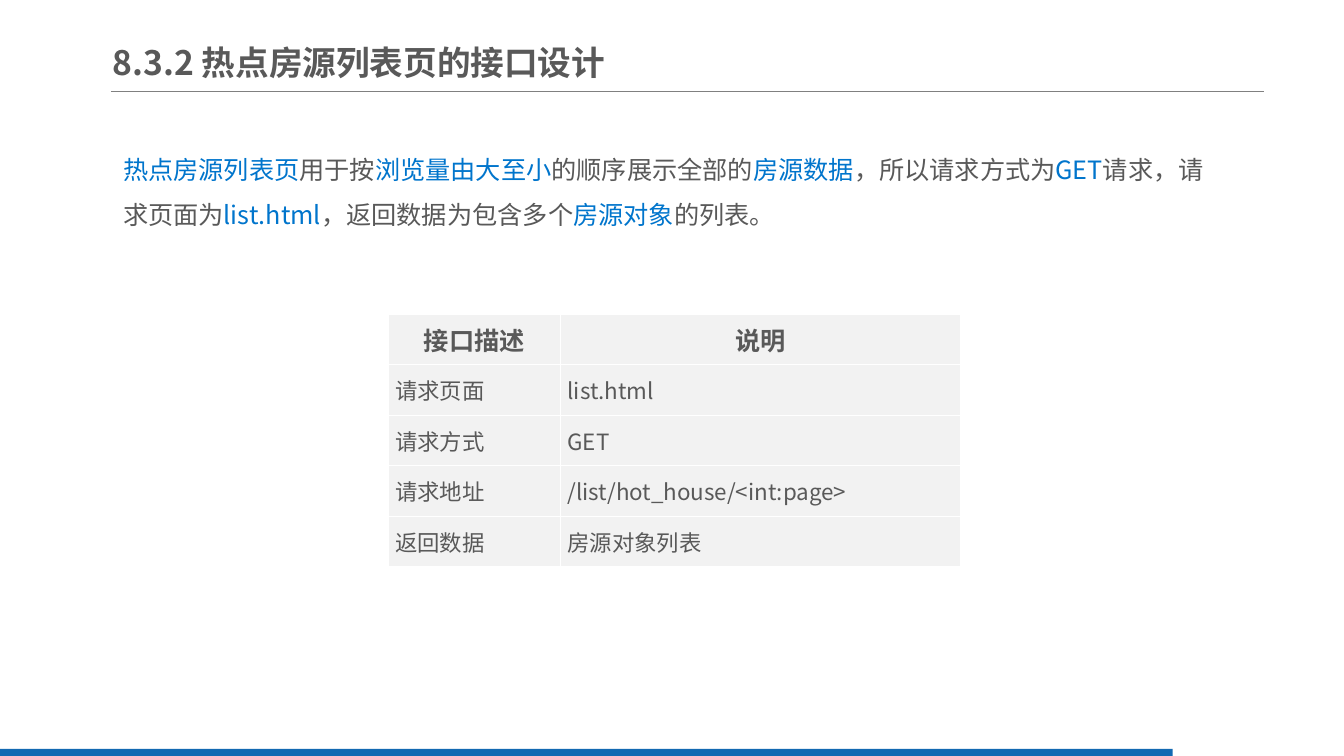
from lxml import etree
from pptx import Presentation
from pptx import util as u
from pptx.dml.color import RGBColor
from pptx.enum import shapes, text
from pptx.oxml import ns

FONT = "Noto Sans CJK SC"
GREY_TEXT = RGBColor(0x59, 0x59, 0x59)
BLUE_TEXT = RGBColor(0x00, 0x75, 0xCC)
RULE_GREY = RGBColor(0x80, 0x80, 0x80)
BAR_BLUE = RGBColor(0x13, 0x69, 0xB2)
CELL_GREY = RGBColor(0xF2, 0xF2, 0xF2)
WHITE = RGBColor(0xFF, 0xFF, 0xFF)

INTRODUCTION = [
    ("热点房源列表页", BLUE_TEXT),
    ("用于按", GREY_TEXT),
    ("浏览量由大至小", BLUE_TEXT),
    ("的顺序展示全部的", GREY_TEXT),
    ("房源数据", BLUE_TEXT),
    ("，所以请求方式为", GREY_TEXT),
    ("GET", BLUE_TEXT),
    ("请求，请求页面为", GREY_TEXT),
    ("list.html", BLUE_TEXT),
    ("，返回数据为包含多个", GREY_TEXT),
    ("房源对象", BLUE_TEXT),
    ("的列表。", GREY_TEXT),
]
INTERFACE_ROWS = [
    ("接口描述", "说明"),
    ("请求页面", "list.html"),
    ("请求方式", "GET"),
    ("请求地址", "/list/hot_house/<int:page>"),
    ("返回数据", "房源对象列表"),
]


class SlideBuilder:
    def __init__(self, slide):
        self.slide = slide

    def style_run(self, run, size, color=GREY_TEXT, bold=False):
        run.font.size = u.Pt(size)
        run.font.bold = bold
        run.font.color.rgb = color
        run.font.name = FONT
        east_asian = etree.SubElement(run.font._element, ns.qn("a:ea"))
        east_asian.set("typeface", FONT)

    def place(self, shape, left, top, width, height):
        shape.left, shape.top = u.Inches(left), u.Inches(top)
        shape.width, shape.height = u.Inches(width), u.Inches(height)

    def rule(self, left, right, top):
        line = self.slide.shapes.add_connector(
            shapes.MSO_CONNECTOR.STRAIGHT,
            u.Inches(left), u.Inches(top), u.Inches(right), u.Inches(top))
        line.line.color.rgb = RULE_GREY
        line.line.width = u.Pt(0.75)
        etree.SubElement(line._element.spPr, ns.qn("a:effectLst"))

    def bar(self, left, top, width, height):
        bar = self.slide.shapes.add_shape(
            shapes.MSO_SHAPE.RECTANGLE,
            u.Inches(left), u.Inches(top), u.Inches(width), u.Inches(height))
        bar.shadow.inherit = False
        bar.fill.solid()
        bar.fill.fore_color.rgb = BAR_BLUE
        bar.line.fill.background()

    def title(self, words, *box):
        title = self.slide.shapes.title
        self.place(title, *box)
        frame = title.text_frame
        frame.text = words
        frame.word_wrap = True
        frame.auto_size = text.MSO_AUTO_SIZE.NONE
        frame.vertical_anchor = text.MSO_ANCHOR.MIDDLE
        frame.margin_left = frame.margin_right = 0
        frame.margin_top = frame.margin_bottom = u.Inches(0.07)
        paragraph = frame.paragraphs[0]
        paragraph.alignment = text.PP_ALIGN.LEFT
        self.style_run(paragraph.runs[0], 24, bold=True)

    def body(self, parts, *box):
        body = self.slide.placeholders[1]
        self.place(body, *box)
        frame = body.text_frame
        frame.word_wrap = True
        frame.auto_size = text.MSO_AUTO_SIZE.SHAPE_TO_FIT_TEXT
        frame.vertical_anchor = text.MSO_ANCHOR.TOP
        paragraph = frame.paragraphs[0]
        properties = paragraph._p.get_or_add_pPr()
        properties.set("marL", "0")
        properties.set("indent", "0")
        etree.SubElement(properties, ns.qn("a:buNone"))
        paragraph.line_spacing = 1.5
        paragraph.space_before = u.Pt(0)
        for words, color in parts:
            run = paragraph.add_run()
            run.text = words
            self.style_run(run, 18, color)

    def cell_borders(self, cell):
        properties = cell._tc.get_or_add_tcPr()
        for index, side in enumerate(("lnL", "lnR", "lnT", "lnB")):
            line = etree.Element(ns.qn(f"a:{side}"), w=str(u.Pt(0.75)))
            fill = etree.SubElement(line, ns.qn("a:solidFill"))
            etree.SubElement(fill, ns.qn("a:srgbClr"), val=str(WHITE))
            properties.insert(index, line)

    def table(self, rows, left, top, column_widths, row_height):
        table = self.slide.shapes.add_table(
            len(rows), len(column_widths), u.Inches(left), u.Inches(top),
            u.Inches(sum(column_widths)), u.Inches(row_height * len(rows))).table
        table.horz_banding = False
        for column, width in zip(table.columns, column_widths):
            column.width = u.Inches(width)
        for row_index, row in enumerate(rows):
            table.rows[row_index].height = u.Inches(row_height)
            for column_index, words in enumerate(row):
                cell = table.cell(row_index, column_index)
                self.cell(cell, words, header=row_index == 0)

    def cell(self, cell, words, header):
        cell.text_frame.text = words
        cell.vertical_anchor = text.MSO_ANCHOR.MIDDLE
        cell.margin_left = cell.margin_right = u.Inches(0.07)
        cell.margin_top = cell.margin_bottom = 0
        cell.fill.solid()
        cell.fill.fore_color.rgb = CELL_GREY
        self.cell_borders(cell)
        paragraph = cell.text_frame.paragraphs[0]
        paragraph.alignment = text.PP_ALIGN.CENTER if header else text.PP_ALIGN.LEFT
        self.style_run(paragraph.runs[0], 18 if header else 16, bold=header)


def main():
    presentation = Presentation()
    presentation.slide_width = u.Inches(13.33)
    presentation.slide_height = u.Inches(7.5)
    slide = presentation.slides.add_slide(presentation.slide_layouts[1])
    builder = SlideBuilder(slide)
    builder.rule(1.1, 12.54, 0.91)
    builder.bar(0, 7.43, 11.63, 0.09)
    builder.title("8.3.2 热点房源列表页的接口设计", 1.12, 0.34, 5.36, 0.55)
    builder.body(INTRODUCTION, 1.12, 1.33, 11.14, 1.01)
    builder.table(INTERFACE_ROWS, 3.85, 3.12, (1.71, 3.97), 0.5)
    presentation.save("out.pptx")


if __name__ == "__main__":
    main()
